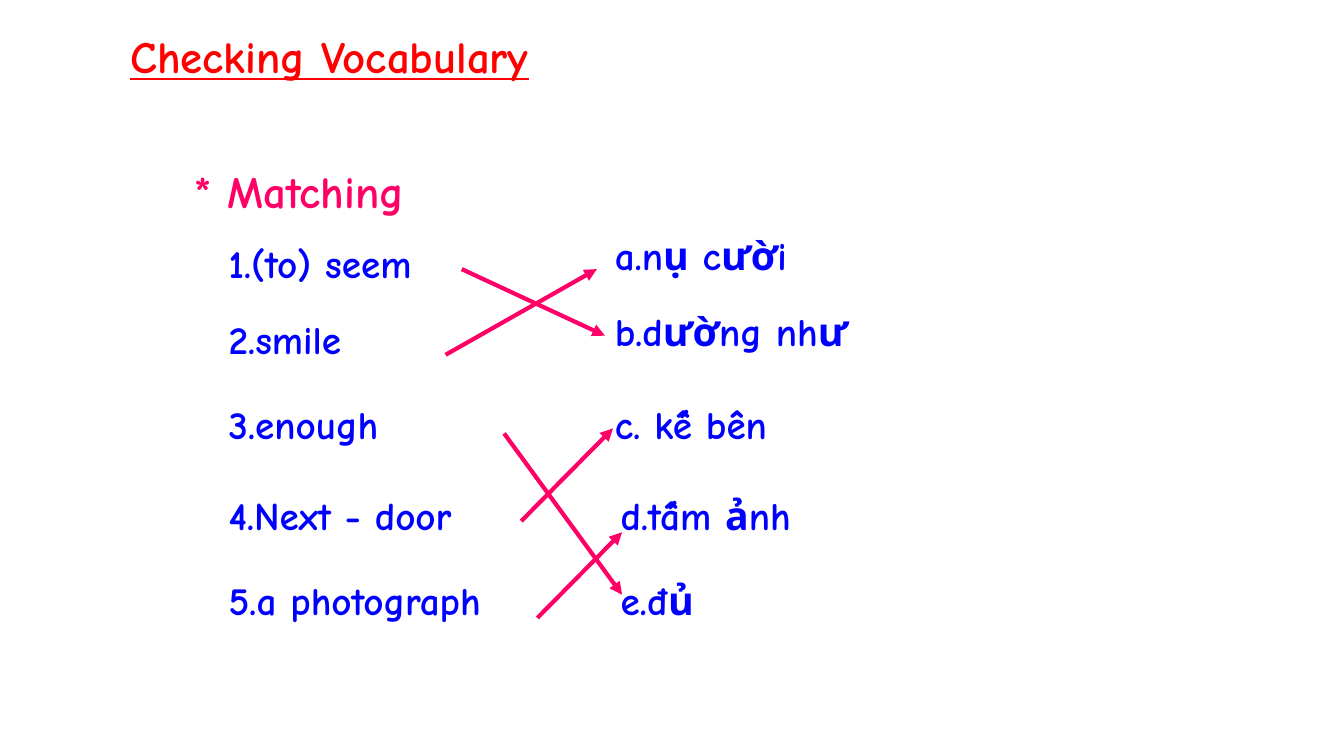
from typing import NamedTuple

from lxml.etree import SubElement
from pptx import Presentation
from pptx.dml.color import RGBColor
from pptx.enum.shapes import MSO_CONNECTOR as Connector
from pptx.enum.text import MSO_ANCHOR as Anchor, MSO_AUTO_SIZE as AutoSize, PP_ALIGN as Align
from pptx.oxml.ns import qn
from pptx.util import Inches, Pt

RED = RGBColor(0xFF, 0x00, 0x00)
PINK = RGBColor(0xFF, 0x00, 0x66)
BLUE = RGBColor(0x00, 0x00, 0xFF)
FONT = "Comic Neue"
WORD_LEFT = 2.17


class Label(NamedTuple):
    text: str
    left: float
    top: float
    width: float
    height: float = 0.57
    size: int = 28
    color: RGBColor = BLUE
    underline: bool = False


class Arrow(NamedTuple):
    x1: float
    y1: float
    x2: float
    y2: float


TITLE = Label("Checking Vocabulary", 1.19, 0.23, 5.42, 0.64, 32, RED, True)

LABELS = [
    Label("* Matching", 1.83, 1.58, 3, 0.64, 32, PINK),
    Label("1.(to) seem", WORD_LEFT, 2.33, 3.25),
    Label("2.smile", WORD_LEFT, 3.08, 3.25),
    Label("3.enough", WORD_LEFT, 3.92, 3.75),
    Label("4.Next - door", WORD_LEFT, 4.83, 3.75),
    Label("5.a photograph", WORD_LEFT, 5.67, 3.25),
    Label("a.nụ cười", 6, 2.25, 3.25),
    Label("b.dường như", 6, 3, 4.83),
    Label("c. kế bên", 6, 3.92, 3.25),
    Label(" d.tấm ảnh", 5.92, 4.83, 4.83),
    Label(" e.đủ", 5.92, 5.67, 3.25),
]

MATCHES = [
    Arrow(4.58, 2.67, 6, 3.33),
    Arrow(4.42, 3.52, 5.92, 2.67),
    Arrow(5, 4.3, 6.17, 5.9),
    Arrow(5.17, 5.17, 6.08, 4.25),
    Arrow(5.33, 6.13, 6.17, 5.28),
]


def write_label(box, label: Label) -> None:
    """Place a text shape and fill it with one formatted line."""
    box.left, box.top = Inches(label.left), Inches(label.top)
    box.width, box.height = Inches(label.width), Inches(label.height)
    frame = box.text_frame
    frame.word_wrap = True
    frame.auto_size = AutoSize.SHAPE_TO_FIT_TEXT
    frame.vertical_anchor = Anchor.TOP
    para = frame.paragraphs[0]
    para.alignment = Align.LEFT
    span = para.add_run()
    span.text = label.text
    font = span.font
    font.name, font.size, font.bold = FONT, Pt(label.size), True
    font.underline = label.underline
    font.color.rgb = label.color


def add_arrow(page, arrow: Arrow) -> None:
    line = page.shapes.add_connector(Connector.STRAIGHT, *map(Inches, arrow))
    line.line.color.rgb = PINK
    line.line.width = Pt(3)
    SubElement(line.line._get_or_add_ln(), qn("a:tailEnd"), type="triangle")
    SubElement(line._element.spPr, qn("a:effectLst"))


def main() -> None:
    deck = Presentation()
    deck.slide_width, deck.slide_height = Inches(13.33), Inches(7.5)
    page = deck.slides.add_slide(deck.slide_layouts.get_by_name("Title Only"))
    write_label(page.shapes.title, TITLE)
    for label in LABELS:
        write_label(page.shapes.add_textbox(0, 0, 0, 0), label)
    for arrow in MATCHES:
        add_arrow(page, arrow)
    deck.save("out.pptx")


if __name__ == "__main__":
    main()
